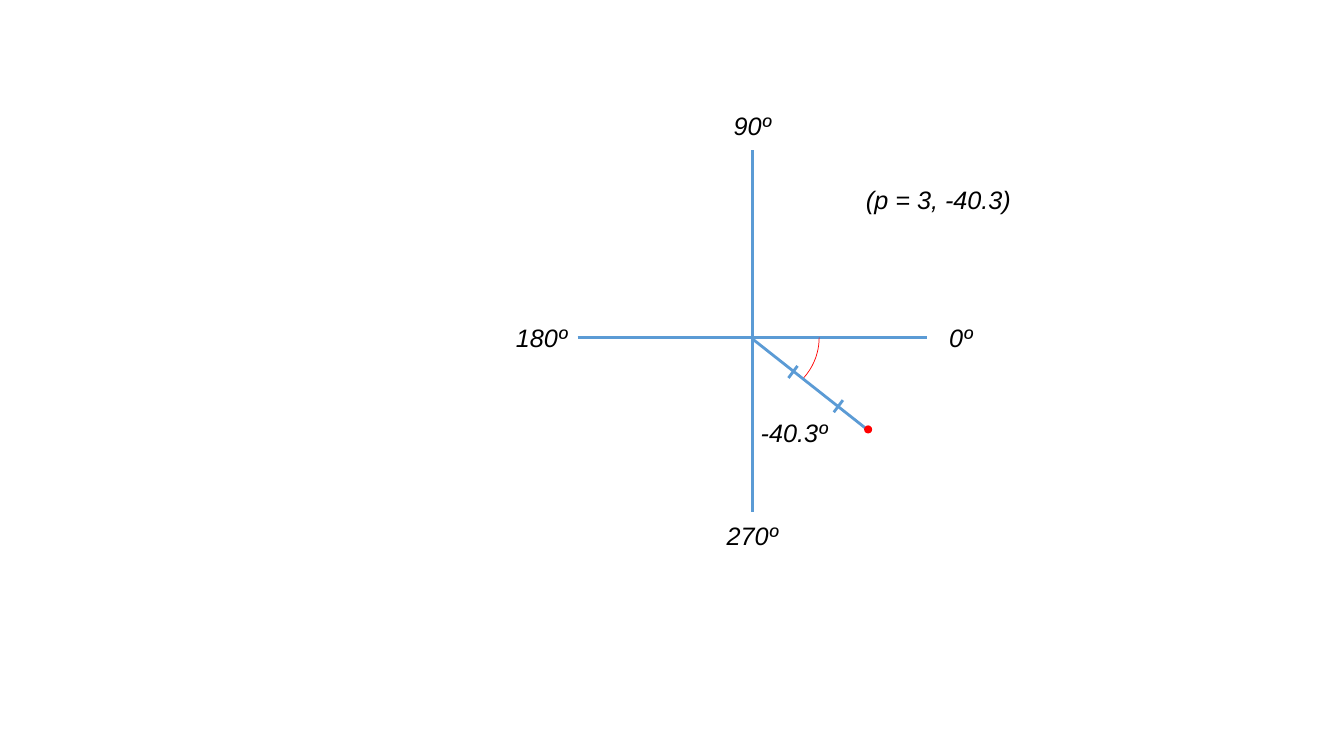
from dataclasses import dataclass

from lxml.etree import SubElement
from pptx import Presentation
from pptx.dml.color import RGBColor as Rgb
from pptx.enum.shapes import MSO_CONNECTOR as Conn, MSO_SHAPE as Geom
from pptx.enum.text import MSO_ANCHOR as Anchor, MSO_AUTO_SIZE as Fit, PP_ALIGN as Align
from pptx.oxml.ns import qn
from pptx.util import Inches, Pt


@dataclass(frozen=True)
class Theme:
    font: str = "Arial"
    size: float = 18
    ink: str = "000000"
    axis: str = "5B9BD5"
    mark: str = "FF0000"
    bold: float = 2
    thin: float = 0.5


class Plot:
    def __init__(self, slide, theme):
        self.slide = slide
        self.theme = theme

    def line(self, x1, y1, x2, y2):
        ends = [Inches(v) for v in (x1, y1, x2, y2)]
        line = self.slide.shapes.add_connector(Conn.STRAIGHT, *ends)
        line.line.color.rgb = Rgb.from_string(self.theme.axis)
        line.line.width = Pt(self.theme.bold)
        SubElement(line._element.spPr, qn("a:effectLst"))

    def label(self, text, left, top, width, align=Align.CENTER):
        box = self.slide.shapes.add_textbox(
            Inches(left), Inches(top), Inches(width), Inches(0.4))
        frame = box.text_frame
        frame.word_wrap = False
        frame.auto_size = Fit.SHAPE_TO_FIT_TEXT
        frame.vertical_anchor = Anchor.TOP
        para = frame.paragraphs[0]
        para.text = text
        para.alignment = align
        font = para.font
        font.name = self.theme.font
        font.size = Pt(self.theme.size)
        font.italic = True
        font.color.rgb = Rgb.from_string(self.theme.ink)

    def shape(self, kind, x, y, width, height):
        shape = self.slide.shapes.add_shape(
            kind, Inches(x - width / 2), Inches(y - height / 2),
            Inches(width), Inches(height))
        shape.shadow.inherit = False
        return shape

    def arc(self, x, y, width, height, start, end):
        arc = self.shape(Geom.ARC, x, y, width, height)
        for i, angle in enumerate((start, end)):
            arc.adjustments[i] = angle * 0.6
        arc.fill.background()
        arc.line.color.rgb = Rgb.from_string(self.theme.mark)
        arc.line.width = Pt(self.theme.thin)

    def dot(self, x, y, size):
        dot = self.shape(Geom.OVAL, x, y, size, size)
        dot.fill.solid()
        dot.fill.fore_color.rgb = Rgb.from_string(self.theme.mark)
        dot.line.fill.background()


def main():
    deck = Presentation()
    deck.slide_width = Inches(13.33)
    deck.slide_height = Inches(7.5)
    plot = Plot(deck.slides.add_slide(deck.slide_layouts[6]), Theme())

    x, y = 7.46, 3.35
    plot.line(x, 1.49, x, 5.08)
    plot.line(5.73, y, 9.19, y)

    for text, left, top, width in (
        ("90º", 7.17, 1.05, 0.58),
        ("0º", 9.31, 3.15, 0.44),
        ("270º", 7.1, 5.11, 0.72),
        ("180º", 5.01, 3.15, 0.72),
        ("-40.3º", 7.44, 4.09, 0.87),
    ):
        plot.label(text, left, top, width)
    plot.label("(p = 3, -40.3)", 8.49, 1.78, 1.72, Align.LEFT)

    plot.arc(x, y, 1.33, 1.25, 0, 38.7)
    plot.line(x, 3.36, 8.6, 4.26)
    for i in range(2):
        left, low = 7.82 + 0.45 * i, 3.75 + 0.34 * i
        plot.line(left, low, left + 0.09, low - 0.12)
    plot.dot(8.61, 4.26, 0.08)

    deck.save("out.pptx")


if __name__ == "__main__":
    main()
